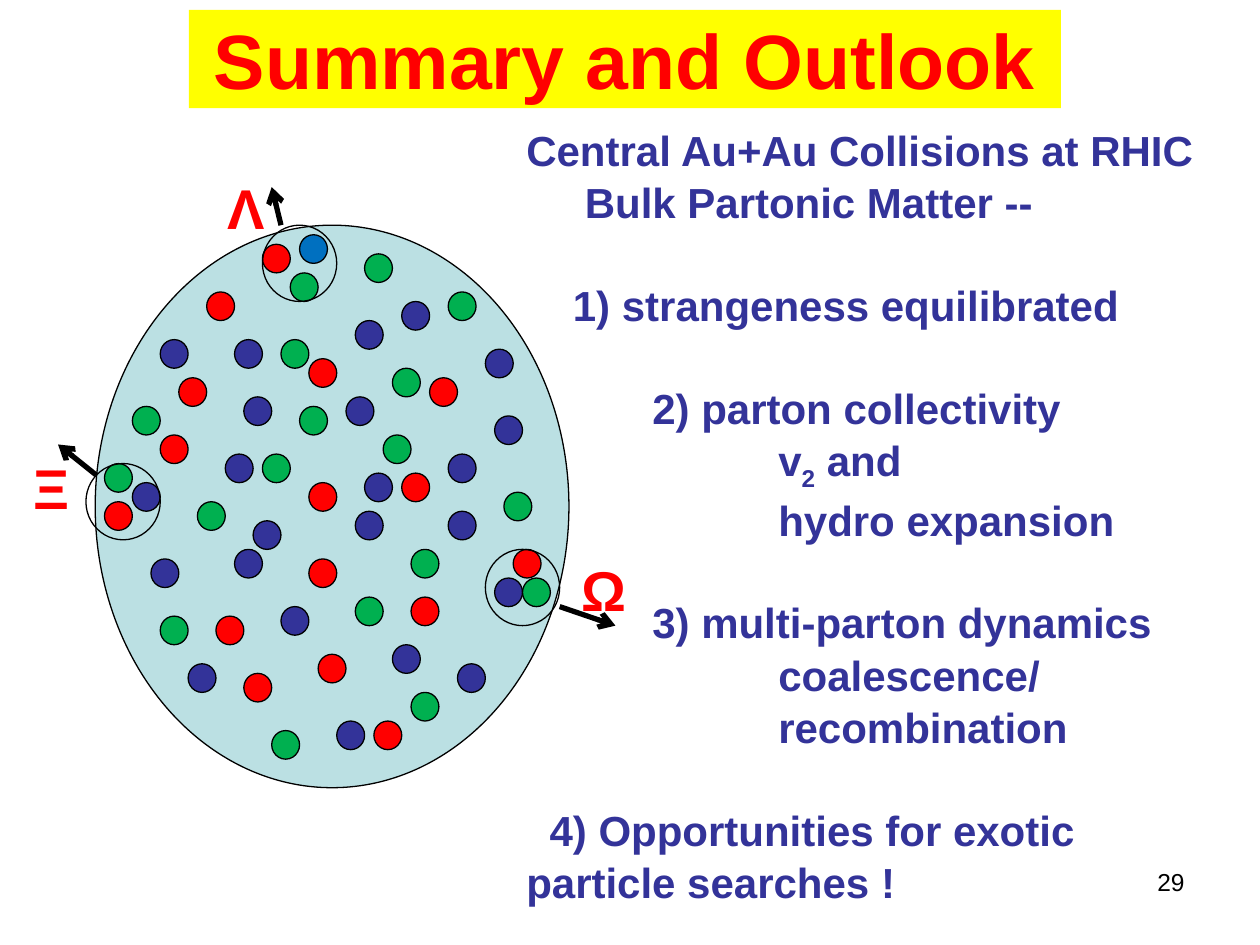
from dataclasses import dataclass

from lxml.etree import SubElement
from pptx import Presentation
from pptx.dml.color import RGBColor
from pptx.enum.shapes import MSO_CONNECTOR as Connector, MSO_SHAPE as Shape
from pptx.enum.text import MSO_ANCHOR as Anchor, PP_ALIGN as Align
from pptx.oxml.ns import qn
from pptx.util import Cm, Pt


@dataclass(frozen=True)
class Theme:
    font: str = "Arial"
    red: str = "FF0000"
    green: str = "00B050"
    navy: str = "333399"
    blue: str = "0070C0"
    yellow: str = "FFFF00"
    medium: str = "BBE0E3"
    black: str = "000000"
    title_pt: float = 44
    hadron_pt: float = 32
    body_pt: float = 24
    number_pt: float = 14
    outline_pt: float = 0.75
    arrow_pt: float = 3


@dataclass(frozen=True)
class Line:
    text: str
    indent: float = 0  # first-line indent, cm
    gap: bool = False  # one line of space before
    subscript: str = ""
    rest: str = ""


@dataclass(frozen=True)
class Hadron:
    symbol: str
    label: tuple[float, float, float]  # left, top, width in cm
    halo: tuple[int, int]  # grid column, row
    arrow: tuple[float, float, float, float]  # grid columns and rows


THEME = Theme()

# The fireball spans 51 x 59 grid cells, a parton 3 x 3, a halo 8 x 8
FIREBALL_LEFT, FIREBALL_TOP = 1.92, 4.54
CELL_W, CELL_H = 9.55 / 51, 11.34 / 59
PARTON, HALO = 3, 8

PARTONS = {
    THEME.red: [
        (23, 14), (23, 27), (36, 16), (9, 16), (23, 35), (34, 39), (16, 47), (33, 26),
        (7, 22), (24, 45), (13, 41), (45, 34), (18, 2), (12, 7), (30, 52), (1, 29),
    ],
    THEME.navy: [
        (28, 10), (15, 12), (38, 24), (32, 44), (28, 30), (39, 46), (43, 20), (33, 8),
        (15, 34), (6, 35), (16, 18), (4, 27), (43, 37), (42, 13), (20, 40), (26, 52),
        (7, 12), (14, 24), (27, 18), (29, 26), (38, 30), (17, 31), (10, 46),
    ],
    THEME.green: [
        (22, 19), (31, 22), (11, 29), (7, 41), (32, 15), (34, 34), (34, 49), (44, 28),
        (21, 5), (46, 37), (38, 7), (29, 3), (28, 39), (1, 25), (18, 24), (20, 12),
        (19, 53), (4, 19),
    ],
    THEME.blue: [(22, 1)],
}

HADRONS = [
    Hadron("Ω", (11.48, 11.07, 1.22), (42, 34), (50, 40, 56, 42)),
    Hadron("Ξ", (0.43, 9.02, 1.09), (-1, 25), (0.1, 26.2, -4, 23)),
    Hadron("Λ", (4.34, 3.38, 1.14), (18, 0), (20, 0, 19, -4)),
]

SUMMARY = [
    Line("Central Au+Au Collisions at RHIC"),
    Line("Bulk Partonic Matter --", 1.18),
    Line("1) strangeness equilibrated", 0.94, gap=True),
    Line("2) parton collectivity", 2.54, gap=True),
    Line("v", 5.08, subscript="2", rest=" and"),
    Line("hydro expansion", 5.08),
    Line("3) multi-parton dynamics", 2.54, gap=True),
    Line("coalescence/", 5.08),
    Line("recombination", 5.08),
    Line("4) Opportunities for exotic particle searches !", 0.47, gap=True),
]


def rgb(color: str) -> RGBColor:
    return RGBColor.from_string(color)


def add_text(slide, lines: list[Line], left: float, top: float, width: float, height: float,
             *, size: float, color: str, bold: bool = True, align=Align.LEFT,
             anchor=Anchor.TOP, wrap: bool = True, fill: str = "", spacing: float = 1.0):
    """Place lines of text, with lengths in cm."""
    box = slide.shapes.add_textbox(Cm(left), Cm(top), Cm(width), Cm(height))
    if fill:
        box.fill.solid()
        box.fill.fore_color.rgb = rgb(fill)
    frame = box.text_frame
    frame.word_wrap = wrap
    frame.vertical_anchor = anchor
    for i, line in enumerate(lines):
        paragraph = frame.add_paragraph() if i else frame.paragraphs[0]
        paragraph.alignment = align
        paragraph.line_spacing = spacing
        if line.indent:
            paragraph._p.get_or_add_pPr().set("indent", str(Cm(line.indent)))
        if line.gap:
            paragraph.space_before = Pt(size * 1.2)
        for part, baseline in ((line.text, 0), (line.subscript, -25000), (line.rest, 0)):
            if not part:
                continue
            run = paragraph.add_run()
            run.text = part
            font = run.font
            font.name, font.size, font.bold = THEME.font, Pt(size), bold
            font.color.rgb = rgb(color)
            if baseline:
                font._element.set("baseline", str(baseline))


def grid_point(column: float, row: float) -> tuple[Cm, Cm]:
    return Cm(FIREBALL_LEFT + column * CELL_W), Cm(FIREBALL_TOP + row * CELL_H)


def add_ellipse(slide, column: int, row: int, columns: int, rows: int, fill: str = "") -> None:
    ellipse = slide.shapes.add_shape(
        Shape.OVAL, *grid_point(column, row), Cm(columns * CELL_W), Cm(rows * CELL_H))
    ellipse.shadow.inherit = False
    if fill:
        ellipse.fill.solid()
        ellipse.fill.fore_color.rgb = rgb(fill)
    else:
        ellipse.fill.background()
    ellipse.line.color.rgb = rgb(THEME.black)
    ellipse.line.width = Pt(THEME.outline_pt)


def add_arrow(slide, column: float, row: float, end_column: float, end_row: float) -> None:
    arrow = slide.shapes.add_connector(
        Connector.STRAIGHT, *grid_point(column, row), *grid_point(end_column, end_row))
    arrow.line.color.rgb = rgb(THEME.black)
    arrow.line.width = Pt(THEME.arrow_pt)
    SubElement(arrow.line._get_or_add_ln(), qn("a:tailEnd"), type="arrow")
    SubElement(arrow._element.spPr, qn("a:effectLst"))


def main() -> None:
    deck = Presentation()
    deck.slide_width, deck.slide_height = Cm(25.4), Cm(19.05)
    slide = deck.slides.add_slide(deck.slide_layouts[6])

    # Title and slide number
    add_text(slide, [Line("Summary and Outlook")], 3.81, 0.2, 17.58, 1.98,
             size=THEME.title_pt, color=THEME.red, align=Align.CENTER,
             anchor=Anchor.MIDDLE, fill=THEME.yellow)
    add_text(slide, [Line("29")], 18.21, 17.35, 5.92, 1.32,
             size=THEME.number_pt, color=THEME.black, bold=False, align=Align.RIGHT)

    # Fireball with its partons
    add_ellipse(slide, 0, 0, 51, 59, THEME.medium)
    for color, cells in PARTONS.items():
        for column, row in cells:
            add_ellipse(slide, column, row, PARTON, PARTON, color)

    # Hadrons leaving the fireball
    for hadron in HADRONS:
        left, top, width = hadron.label
        add_text(slide, [Line(hadron.symbol)], left, top, width, 1.47,
                 size=THEME.hadron_pt, color=THEME.red, wrap=False)
        add_ellipse(slide, *hadron.halo, HALO, HALO)
        add_arrow(slide, *hadron.arrow)

    # Summary points
    add_text(slide, SUMMARY, 10.36, 2.34, 14.07, 15.65,
             size=THEME.body_pt, color=THEME.navy, spacing=1.04)

    deck.save("out.pptx")


if __name__ == "__main__":
    main()
